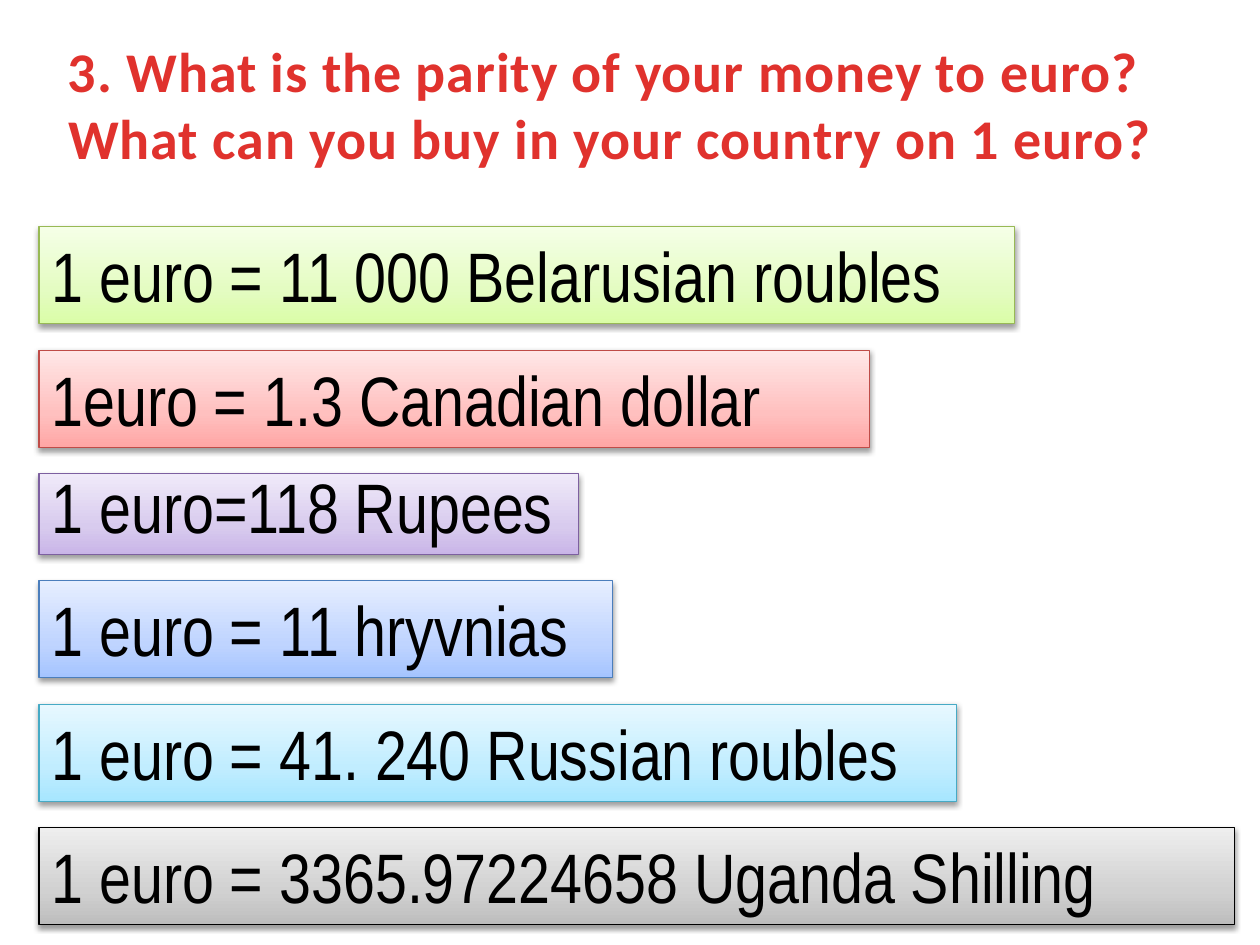
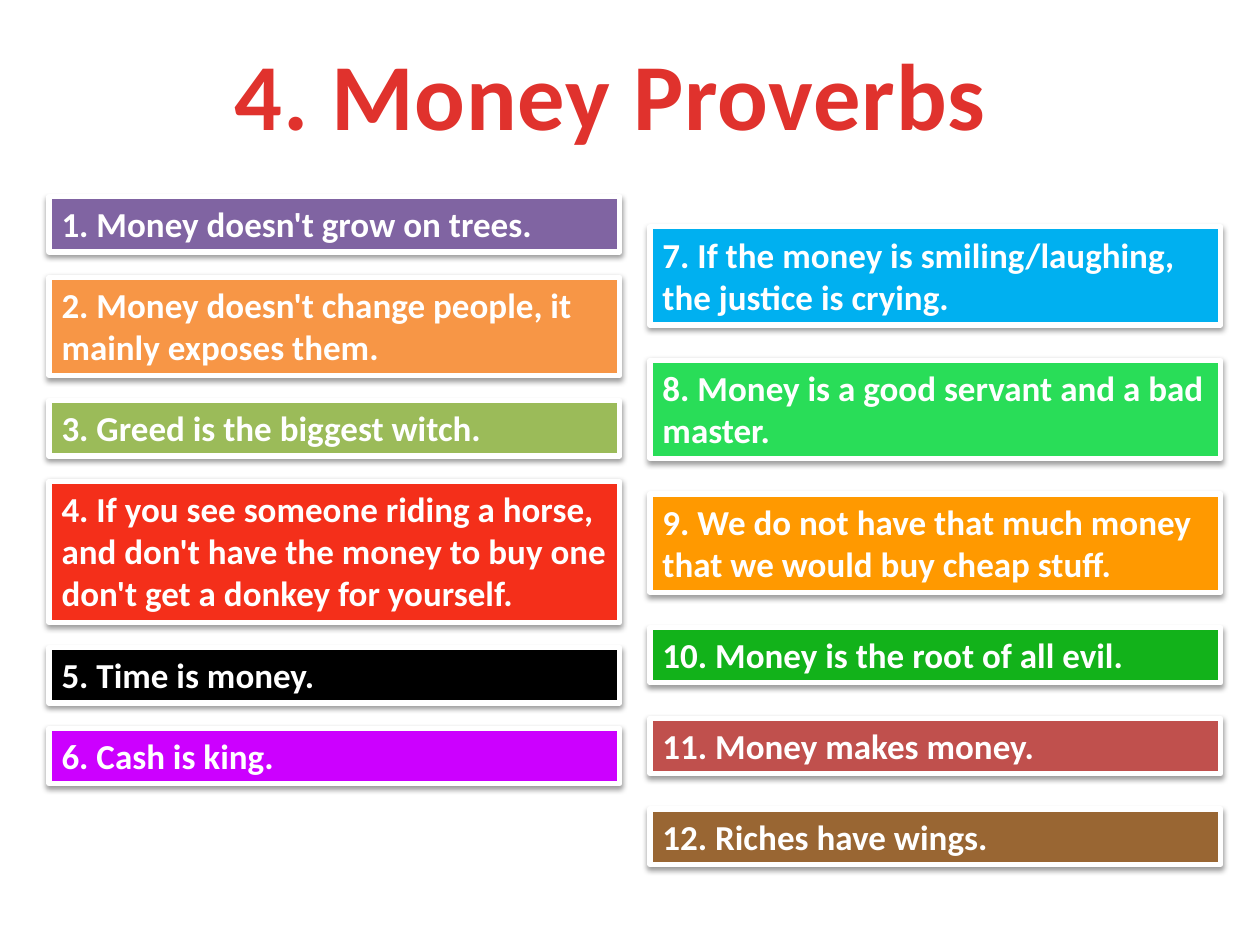
import copy
from dataclasses import dataclass

import pptx
import pptx.dml.color
import pptx.enum.shapes
import pptx.enum.text
import pptx.oxml
import pptx.oxml.ns
import pptx.util

Inches, Pt = pptx.util.Inches, pptx.util.Pt
RGB = pptx.dml.color.RGBColor.from_string
ALIGN = pptx.enum.text.PP_ALIGN
ANCHOR = pptx.enum.text.MSO_ANCHOR


@dataclass(frozen=True)
class Theme:
    title_color: str = "E0322D"
    dark_text: str = "000000"
    light: str = "FFFFFF"
    title_font: str = "Calibri"
    rate_font: str = "Arial Narrow"
    question_size: int = 32
    heading_size: int = 54
    rate_size: int = 40
    proverb_size: int = 20
    rate_line: float = 0.75
    proverb_line: float = 3


THEME = Theme()
SHADOW = (
    '<a:outerShdw %s blurRad="40000" dist="20000" dir="5400000" rotWithShape="0">'
    '<a:srgbClr val="000000"><a:alpha val="38000"/></a:srgbClr></a:outerShdw>'
    % pptx.oxml.ns.nsdecls("a")
)

# Text, width, height, line spacing, line colour, gradient from bottom to top
RATES = [
    ("1 euro = 11 000 Belarusian roubles", 7.74, 0.77, 1, "98B955",
     ("DAFDA7", "E4FCC2", "F5FFE7")),
    ("1euro = 1.3 Canadian dollar", 6.59, 0.77, 1, "BF4C48",
     ("FFA6A5", "FFC0BF", "FFE7E7")),
    ("1 euro=118 Rupees", 4.28, 0.64, 0.8, "7D60A0",
     ("C9B5E8", "D8CBEE", "F0EAF9")),
    ("1 euro = 11 hryvnias", 4.55, 0.77, 1, "4B7EBC",
     ("A4C4FF", "BFD4FF", "E6EEFF")),
    ("1 euro = 41. 240 Russian roubles", 7.28, 0.77, 1, "46AAC5",
     ("A7E6FF", "C1EDFF", "E7F8FF")),
    ("1 euro = 3365.97224658 Uganda Shilling", 9.49, 0.77, 1, "000000",
     ("BDBDBD", "D1D1D1", "EEEEEE")),
]

# Text, number of lines, fill
LEFT_PROVERBS = [
    ("1. Money doesn't grow on trees.", 1, "8064A2"),
    ("2. Money doesn't change people, it mainly exposes them.", 2, "F79646"),
    ("3. Greed is the biggest witch.", 1, "9BBB59"),
    ("4. If you see someone riding a horse, and don't have the money to buy one "
     "don't get a donkey for yourself.", 3, "F42F1A"),
    ("5. Time is money.", 1, "000000"),
    ("6. Cash is king.", 1, "CC00FF"),
]
RIGHT_PROVERBS = [
    ("7. If the money is smiling/laughing, the justice is crying.", 2, "00B0F0"),
    ("8. Money is a good servant and a bad master.", 2, "29DD58"),
    ("9. We do not have that much money that we would buy cheap stuff.", 2, "FF9900"),
    ("10. Money is the root of all evil.", 1, "12B21A"),
    ("11. Money makes money.", 1, "C0504D"),
    ("12. Riches have wings.", 1, "996633"),
]


def format_paragraph(p, font, size, color, bold, align):
    p.alignment = align
    p.font.name = font
    p.font.size = Pt(size)
    p.font.bold = bold
    p.font.color.rgb = RGB(color)


def add_title(s, lines, size, height):
    title = s.shapes.title
    title.left, title.top = Inches(0), Inches(0.23)
    title.width, title.height = Inches(9.69), Inches(height)
    tf = title.text_frame
    tf.text = "\n".join(lines)
    tf.word_wrap = True
    tf.auto_size = pptx.enum.text.MSO_AUTO_SIZE.NONE
    tf.vertical_anchor = ANCHOR.MIDDLE
    for p in tf.paragraphs:
        format_paragraph(p, THEME.title_font, size, THEME.title_color, True, ALIGN.CENTER)
        p.font._rPr.set("spc", "50")


def add_card(s, text, box, line_color, line_width):
    """Add a rectangle with a soft shadow; return it and its paragraph."""
    sp = s.shapes.add_shape(
        pptx.enum.shapes.MSO_SHAPE.RECTANGLE, *(Inches(v) for v in box))
    sp.line.color.rgb = RGB(line_color)
    sp.line.width = Pt(line_width)
    sp.shadow.inherit = False
    effects = sp._element.spPr.find(pptx.oxml.ns.qn("a:effectLst"))
    effects.append(pptx.oxml.parse_xml(SHADOW))
    tf = sp.text_frame
    tf.text = text
    tf.word_wrap = True
    tf.vertical_anchor = ANCHOR.TOP
    return sp, tf.paragraphs[0]


def fill_gradient(sp, colors):
    sp.fill.gradient()
    sp.fill.gradient_angle = 90
    stops = sp._element.spPr.find(".//" + pptx.oxml.ns.qn("a:gsLst"))
    stops.insert(1, copy.deepcopy(stops[0]))
    for stop, position, color in zip(sp.fill.gradient_stops, (0, 0.35, 1), colors):
        stop.position = position
        stop.color.rgb = RGB(color)


def add_rates(s, left, top, gap):
    for text, width, height, spacing, line_color, colors in RATES:
        sp, p = add_card(s, text, (left, top, width, height), line_color, THEME.rate_line)
        fill_gradient(sp, colors)
        p.line_spacing = spacing
        format_paragraph(p, THEME.rate_font, THEME.rate_size, THEME.dark_text,
                         False, ALIGN.LEFT)
        top += height + gap


def add_proverbs(s, proverbs, left, top, width, gap):
    for text, lines, color in proverbs:
        height = 0.1 + 0.34 * lines
        sp, p = add_card(s, text, (left, top, width, height), THEME.light,
                         THEME.proverb_line)
        sp.fill.solid()
        sp.fill.fore_color.rgb = RGB(color)
        format_paragraph(p, THEME.title_font, THEME.proverb_size, THEME.light,
                         True, ALIGN.LEFT)
        top += height + gap


def build_rates_slide(prs):
    s = prs.slides.add_slide(prs.slide_layouts[5])
    add_title(s, ["3. What is the parity of your money to euro? ",
                  "What can you buy in your country on 1 euro?"],
              THEME.question_size, 1.18)
    add_rates(s, left=0.31, top=1.8, gap=0.21)


def build_proverbs_slide(prs):
    s = prs.slides.add_slide(prs.slide_layouts[5])
    add_title(s, ["4. Money Proverbs"], THEME.heading_size, 1.01)
    add_proverbs(s, LEFT_PROVERBS, left=0.39, top=1.56, width=4.53, gap=0.2)
    add_proverbs(s, RIGHT_PROVERBS, left=5.16, top=1.8, width=4.53, gap=0.28)


def main():
    prs = pptx.Presentation()
    prs.slide_width, prs.slide_height = Inches(10), Inches(7.5)
    build_rates_slide(prs)
    build_proverbs_slide(prs)
    prs.save("out.pptx")


if __name__ == "__main__":
    main()
